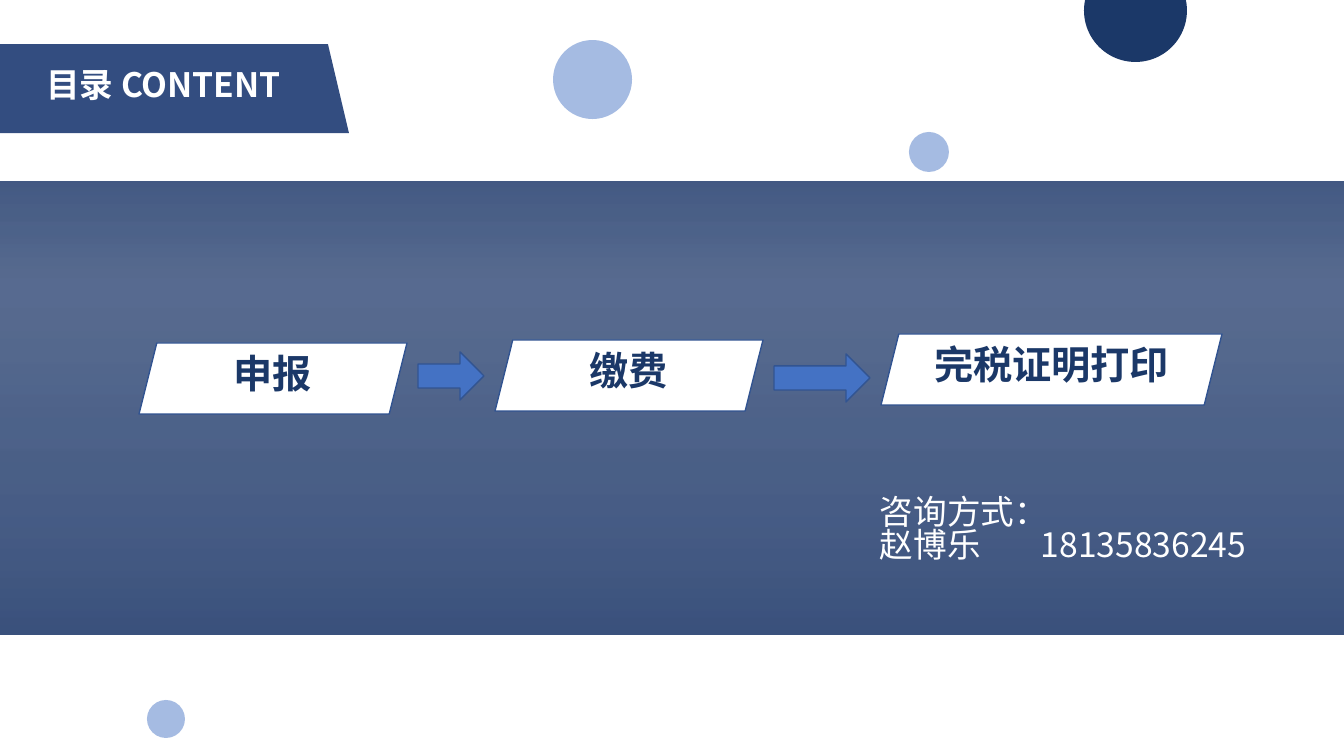
from lxml import etree
from pptx import Presentation
from pptx.dml.color import RGBColor
from pptx.enum.shapes import MSO_SHAPE
from pptx.enum.text import MSO_ANCHOR, PP_ALIGN
from pptx.oxml import parse_xml
from pptx.oxml.ns import nsdecls, qn
from pptx.util import Pt

PX = 12192000 / 1344
RECT, OVAL = MSO_SHAPE.RECTANGLE, MSO_SHAPE.OVAL
SLANTED, ARROW = MSO_SHAPE.PARALLELOGRAM, MSO_SHAPE.RIGHT_ARROW
CENTER, LEFT = PP_ALIGN.CENTER, PP_ALIGN.LEFT
MIDDLE = MSO_ANCHOR.MIDDLE

WHITE = RGBColor(0xFF, 0xFF, 0xFF)
NAVY = RGBColor(0x1B, 0x38, 0x68)
BANNER = RGBColor(0x33, 0x4D, 0x80)
BAND = RGBColor(0x20, 0x3A, 0x6B)
BLUE = RGBColor(0x44, 0x72, 0xC4)
OUTLINE = RGBColor(0x32, 0x54, 0x91)

FONT = "Noto Sans CJK SC"
TITLE = {"name": FONT, "size": Pt(24), "bold": True}
STEP = {"name": FONT, "size": Pt(28), "bold": True}
CONTACT = {"name": FONT, "size": Pt(24), "bold": False}
BAND_STOPS = [(0, 100), (38, 74), (75, 84), (100, 95)]
BUBBLES = [(909, 132, 40), (553, 40, 79), (147, 700, 38)]
STEPS = [("申报", 139, 343, 268, 12), ("缴费", 495, 340, 268, 12),
         ("完税证明打印", 881, 334, 341, 15)]
ARROWS = [(418, 352, 66), (774, 354, 96)]


def emu(*lengths):
    """Turn px lengths into EMU."""
    return [round(v * PX) for v in lengths]


def paint(sp, fill, line=None):
    """Give a shape a flat fill and an optional outline."""
    sp.shadow.inherit = False
    sp.fill.solid()
    sp.fill.fore_color.rgb = fill
    if line is None:
        sp.line.fill.background()
    else:
        sp.line.color.rgb = line
        sp.line.width = Pt(1)


def add_shape(shapes, kind, box, fill, line=None, alpha=None):
    """Add a painted preset shape, translucent when alpha is given."""
    sp = shapes.add_shape(kind, *emu(*box))
    paint(sp, fill, line)
    if alpha is not None:
        color = sp.fill._xPr.find(qn("a:solidFill"))[0]
        etree.SubElement(color, qn("a:alpha")).set("val", str(alpha * 1000))
    return sp


def add_band(shapes):
    """Add the backdrop with its vertical translucent gradient."""
    sp = add_shape(shapes, RECT, (-1, 0, 1346, 756), BAND, OUTLINE)
    stops = "".join(
        f'<a:gs pos="{pos * 1000}"><a:srgbClr val="{BAND}">'
        f'<a:alpha val="{alpha * 1000}"/></a:srgbClr></a:gs>'
        for pos, alpha in BAND_STOPS)
    grad = parse_xml(f'<a:gradFill {nsdecls("a")}><a:gsLst>{stops}</a:gsLst>'
                     '<a:lin ang="5400000" scaled="0"/></a:gradFill>')
    solid = sp.fill._xPr.find(qn("a:solidFill"))
    solid.getparent().replace(solid, grad)


def add_banner(shapes):
    """Add the slanted banner behind the title."""
    builder = shapes.build_freeform(0, 44, scale=PX)
    builder.add_line_segments([(328, 44), (349, 133), (0, 133)])
    paint(builder.convert_to_shape(), BANNER)


def write(tf, lines, font, color, align, spacing, tab=None):
    """Fill a text frame with evenly formatted paragraphs."""
    tf.word_wrap = True
    for i, line in enumerate(lines):
        p = tf.paragraphs[0] if i == 0 else tf.add_paragraph()
        p.alignment, p.line_spacing = align, spacing
        if tab and "\t" in line:
            tabs = etree.SubElement(p._p.get_or_add_pPr(), qn("a:tabLst"))
            stop = etree.SubElement(tabs, qn("a:tab"))
            stop.set("pos", str(emu(tab)[0]))
            stop.set("algn", "l")
        r = p.add_run()
        r.text = line
        for key, value in font.items():
            setattr(r.font, key, value)
        r.font.color.rgb = color
        r._r.get_or_add_rPr().find(qn("a:latin")).addnext(
            parse_xml(f'<a:ea {nsdecls("a")} typeface="{FONT}"/>'))


def add_step(shapes, label, x, y, width, inset):
    """Add one step: a slanted box grouped with its label."""
    group = shapes.add_group_shape().shapes
    add_shape(group, SLANTED, (x, y, width, 71), WHITE, OUTLINE)
    box = group.add_textbox(*emu(x + inset, y + 9, width - 2 * inset, 57))
    write(box.text_frame, [label], STEP, NAVY, CENTER, 0.84)


def set_title(shapes, text):
    """Place the title over the banner."""
    title = shapes.title
    title.left, title.top, title.width, title.height = emu(-1, 49, 329, 79)
    title.text_frame.vertical_anchor = MIDDLE
    write(title.text_frame, [text], TITLE, WHITE, CENTER, 0.76)
    shapes._spTree.append(title._element)


def main():
    """Build the contents slide."""
    prs = Presentation()
    prs.slide_width, prs.slide_height = emu(1344, 756)
    s = prs.slides.add_slide(prs.slide_layouts[5])
    shapes = s.shapes
    add_band(shapes)
    add_shape(shapes, RECT, (0, 0, 1344, 180), WHITE, WHITE)
    add_shape(shapes, RECT, (-1, 635, 1347, 123), WHITE)
    add_banner(shapes)
    add_shape(shapes, OVAL, (1084, -41, 103, 103), NAVY)
    for x, y, size in BUBBLES:
        add_shape(shapes, OVAL, (x, y, size, size), BLUE, alpha=48)
    set_title(shapes, "目录 CONTENT")
    for step in STEPS:
        add_step(shapes, *step)
    for x, y, width in ARROWS:
        add_shape(shapes, ARROW, (x, y, width, 48), BLUE, OUTLINE)
    box = shapes.add_textbox(*emu(870, 492, 412, 132))
    write(box.text_frame, ["咨询方式：", "赵博乐\t18135836245"],
          CONTACT, WHITE, LEFT, 0.84, tab=161)
    prs.save("out.pptx")


if __name__ == "__main__":
    main()
